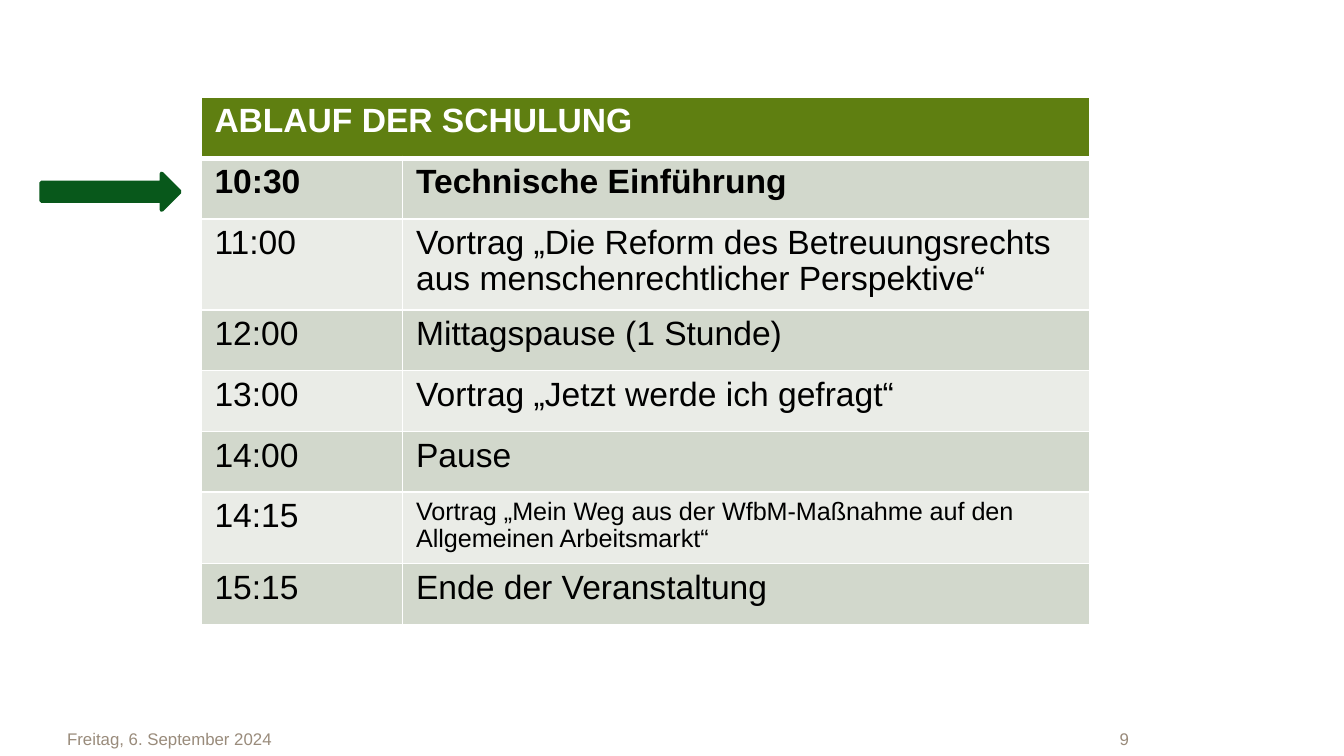
import pptx
import pptx.util
import pptx.dml.color
import pptx.enum.shapes
import pptx.enum.text
import pptx.oxml
import pptx.oxml.ns

Cm, Pt = pptx.util.Cm, pptx.util.Pt
RGBColor = pptx.dml.color.RGBColor

WHITE = RGBColor(0xFF, 0xFF, 0xFF)
BLACK = RGBColor(0, 0, 0)
OLIVE = RGBColor(0x5F, 0x7F, 0x11)
SAGE = RGBColor(0xD2, 0xD8, 0xCC)
PALE = RGBColor(0xEA, 0xEC, 0xE7)
GREEN = RGBColor(0x08, 0x58, 0x1B)
TAUPE = RGBColor(0x99, 0x8B, 0x7B)

HEAD = "ABLAUF DER SCHULUNG"
# time, item, row height in cm, size of the item text
PLAN = [
    ("10:30", "Technische Einführung", 1.15, 18),
    ("11:00", "Vortrag „Die Reform des Betreuungsrechts aus "
              "menschenrechtlicher Perspektive“", 1.68, 18),
    ("12:00", "Mittagspause (1 Stunde)", 1.15, 18),
    ("13:00", "Vortrag „Jetzt werde ich gefragt“", 1.15, 18),
    ("14:00", "Pause", 1.15, 18),
    ("14:15", "Vortrag „Mein Weg aus der WfbM-Maßnahme auf den "
              "Allgemeinen Arbeitsmarkt“", 1.31, 13.5),
    ("15:15", "Ende der Veranstaltung", 1.15, 18),
]


def style(par, size, color, bold=False):
    font = par.font
    font.name, font.size, font.bold = "Arial", Pt(size), bold
    font.color.rgb = color


def edge(cell, base=1):
    """Draw white borders; base is the width of the bottom one."""
    props = cell._tc.get_or_add_tcPr()
    for spot, side in enumerate("LRTB"):
        width = Pt(base if side == "B" else 1)
        line = pptx.oxml.parse_xml(
            f'<a:ln{side} {pptx.oxml.ns.nsdecls("a")} w="{width}">'
            f'<a:solidFill><a:srgbClr val="{WHITE}"/></a:solidFill></a:ln{side}>')
        props.insert(spot, line)


def put(cell, text, size, color, fill, bold=False, base=1):
    cell.text = text
    par = cell.text_frame.paragraphs[0]
    par.line_spacing = 0.96
    style(par, size, color, bold)
    cell.fill.solid()
    cell.fill.fore_color.rgb = fill
    edge(cell, base)


def agenda(slide, left, top, width, height):
    frame = slide.shapes.add_table(len(PLAN) + 1, 2, left, top, width, height)
    table = frame.table
    table.columns[0].width = Cm(3.81)
    table.columns[1].width = width - Cm(3.81)

    # Header across both columns
    table.rows[0].height = Cm(1.15)
    table.cell(0, 0).merge(table.cell(0, 1))
    put(table.cell(0, 0), HEAD, 18, WHITE, OLIVE, True, 3)
    edge(table.cell(0, 1), 3)

    # Banded rows, the current item in bold
    for row, (time, item, tall, size) in enumerate(PLAN, 1):
        table.rows[row].height = Cm(tall)
        fill = SAGE if row % 2 else PALE
        base_bold = row == 1
        put(table.cell(row, 0), time, 18, BLACK, fill, base_bold)
        put(table.cell(row, 1), item, size, BLACK, fill, base_bold)
        if row == 1:
            for cell in table.rows[row].cells:
                top_line = cell._tc.tcPr.find(pptx.oxml.ns.qn("a:lnT"))
                top_line.set("w", str(Pt(3)))


def marker(slide, left, top, width, height):
    arrow = slide.shapes.add_shape(
        pptx.enum.shapes.MSO_SHAPE.RIGHT_ARROW, left, top, width, height)
    arrow.shadow.inherit = False
    arrow.fill.solid()
    arrow.fill.fore_color.rgb = GREEN
    arrow.line.color.rgb = GREEN
    arrow.line.width = Pt(2.08)
    # Rounded corners of the outline
    arrow.line._get_or_add_ln().append(pptx.oxml.parse_xml(
        f'<a:round {pptx.oxml.ns.nsdecls("a")}/>'))


def note(slide, text, left, top, width, height):
    frame = slide.shapes.add_textbox(left, top, width, height).text_frame
    frame.word_wrap = True
    frame.margin_left = frame.margin_right = 0
    frame.vertical_anchor = pptx.enum.text.MSO_ANCHOR.MIDDLE
    frame.text = text
    style(frame.paragraphs[0], 9, TAUPE)


def main():
    deck = pptx.Presentation()
    deck.slide_width, deck.slide_height = Cm(25.4), Cm(14.29)
    slide = deck.slides.add_slide(deck.slide_layouts[6])

    # Footer
    note(slide, "Freitag, 6. September 2024", Cm(1.27), Cm(13.61), Cm(8.05), Cm(0.7))
    note(slide, "9", Cm(21.16), Cm(13.61), Cm(2.97), Cm(0.7))

    # Pointer to the current item, then the schedule
    marker(slide, Cm(0.78), Cm(3.28), Cm(2.62), Cm(0.69))
    agenda(slide, Cm(3.8), Cm(1.84), Cm(16.79), Cm(9.89))
    deck.save("out.pptx")


if __name__ == "__main__":
    main()
